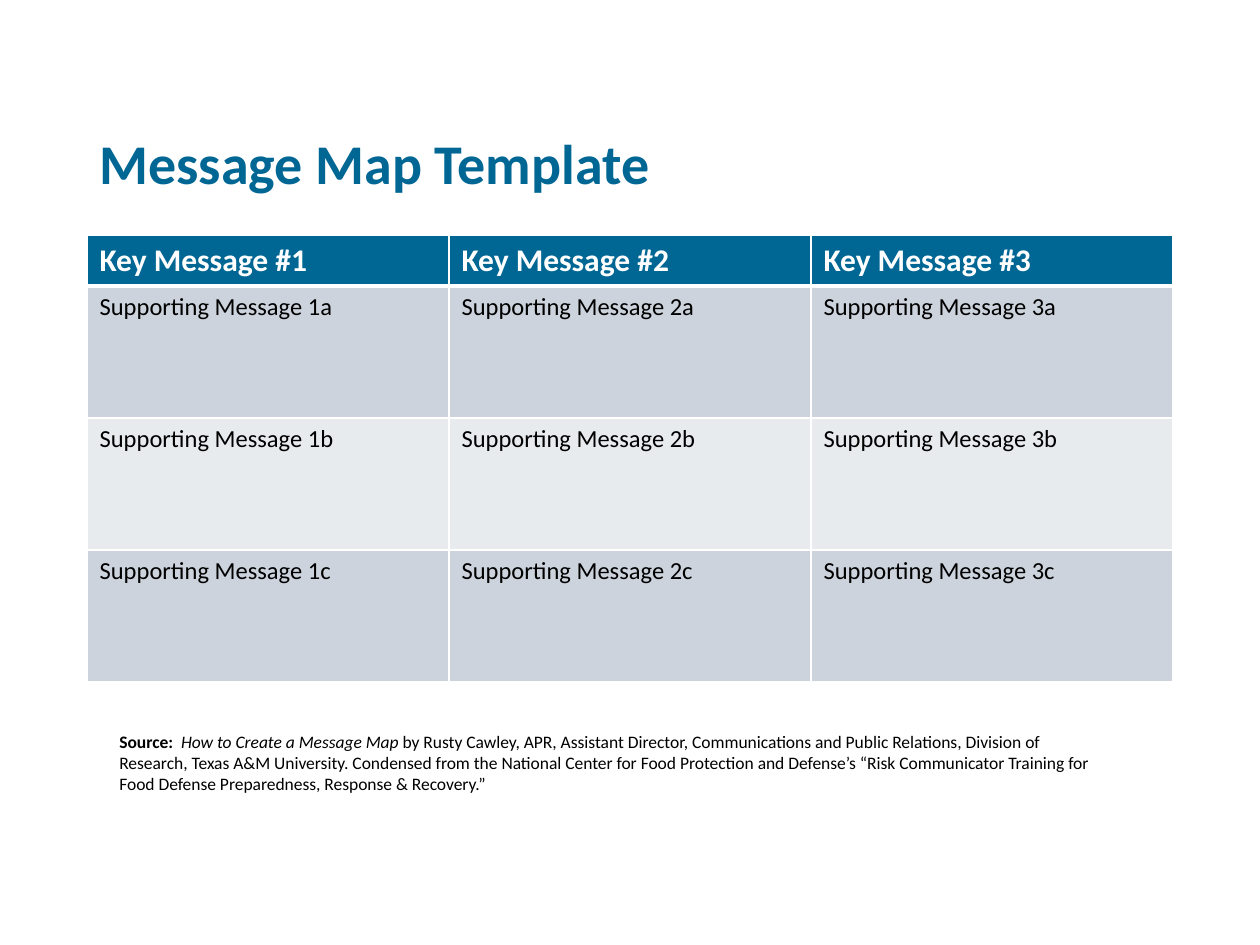
from lxml import etree
from pptx import Presentation
from pptx import util as u
from pptx.dml.color import RGBColor
from pptx.enum import text
from pptx.oxml.ns import qn

BLUE, WHITE, BLACK = "006794", "FFFFFF", "000000"
BANDS = ["CCD3DC", "E7EBEE"]


def px(length):
    return u.Emu(round(length * 914400 / 126))


def rgb(value):
    return RGBColor.from_string(value)


class MessageMap:
    font_name = "Calibri"

    def __init__(self, slide):
        self.slide = slide

    def style(self, paragraph, size, color, bold=None):
        font = paragraph.font
        font.name, font.size, font.bold = self.font_name, u.Pt(size), bold
        font.color.rgb = rgb(color)

    def text_box(self, box, runs, size, color, anchor=text.MSO_ANCHOR.TOP):
        """Add one paragraph of (wording, bold, italic) runs."""
        frame = self.slide.shapes.add_textbox(*map(px, box)).text_frame
        frame.word_wrap = True
        frame.vertical_anchor = anchor
        paragraph = frame.paragraphs[0]
        for wording, bold, italic in runs:
            run = paragraph.add_run()
            run.text = wording
            run.font.bold, run.font.italic = bold, italic
        self.style(paragraph, size, color)
        return frame

    def border(self, cell, side, points):
        line = etree.SubElement(cell._tc.get_or_add_tcPr(), qn(f"a:ln{side}"), w=str(u.Pt(points)))
        fill = etree.SubElement(line, qn("a:solidFill"))
        etree.SubElement(fill, qn("a:srgbClr"), val=WHITE)

    def table(self, left, top, column_width, header_height, body_height, rows):
        columns = len(rows[0])
        heights = [header_height] + [body_height] * (len(rows) - 1)
        grid = self.slide.shapes.add_table(
            len(rows), columns, px(left), px(top),
            px(column_width * columns), px(sum(heights))).table
        for column in grid.columns:
            column.width = px(column_width)
        for r, wordings in enumerate(rows):
            grid.rows[r].height = px(heights[r])
            header = r == 0
            for c, wording in enumerate(wordings):
                cell = grid.cell(r, c)
                widths = {"L": 1, "R": 1, "T": 3 if r == 1 else 1, "B": 3 if header else 1}
                for side, points in widths.items():
                    self.border(cell, side, points)
                cell.fill.solid()
                cell.fill.fore_color.rgb = rgb(BLUE if header else BANDS[(r - 1) % 2])
                cell.text = wording
                self.style(cell.text_frame.paragraphs[0], 18 if header else 14,
                           WHITE if header else BLACK, header)


def main():
    deck = Presentation()
    deck.slide_width, deck.slide_height = px(1260), px(945)
    message_map = MessageMap(deck.slides.add_slide(deck.slide_layouts[6]))

    title = message_map.text_box((87, 58, 1086, 142), [("Message Map Template", True, None)],
                                 32, BLUE, text.MSO_ANCHOR.BOTTOM)
    title.margin_bottom = px(4)

    rows = [[f"Key Message #{n}" for n in (1, 2, 3)]]
    rows += [[f"Supporting Message {n}{letter}" for n in (1, 2, 3)] for letter in "abc"]
    message_map.table(87, 235, 362, 51, 132, rows)

    source = [
        ("Source:  ", True, None),
        ("How to Create a Message Map ", None, True),
        ("by Rusty Cawley, APR, Assistant Director, Communications and Public Relations, "
         "Division of Research, Texas A&M University. Condensed from the National Center for "
         "Food Protection and Defense’s “Risk Communicator Training for Food Defense "
         "Preparedness, Response & Recovery.”", None, None),
    ]
    message_map.text_box((107, 725, 997, 77), source, 10, BLACK)
    deck.save("out.pptx")


if __name__ == "__main__":
    main()
